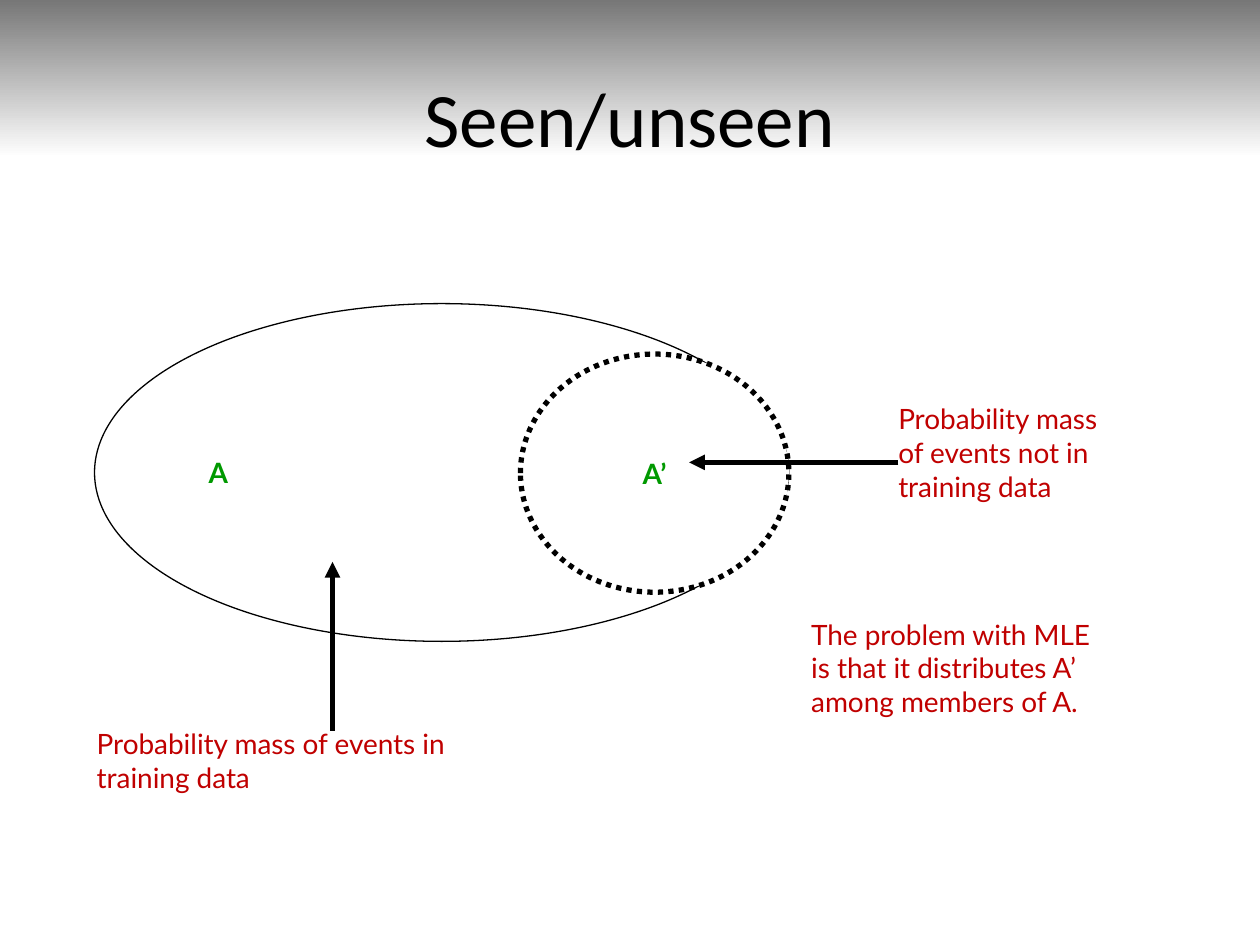
"""Build the slide on seen and unseen probability mass."""
from dataclasses import dataclass

from lxml import etree
from pptx import Presentation
from pptx.dml.color import RGBColor
from pptx.enum.dml import MSO_LINE
from pptx.enum.shapes import MSO_CONNECTOR, MSO_SHAPE
from pptx.enum.text import MSO_ANCHOR, MSO_AUTO_SIZE, PP_ALIGN
from pptx.oxml.ns import qn
from pptx.util import Pt

RECT, OVAL = MSO_SHAPE.RECTANGLE, MSO_SHAPE.OVAL
STRAIGHT = MSO_CONNECTOR.STRAIGHT
DOTS = MSO_LINE.ROUND_DOT
MIDDLE, TOP = MSO_ANCHOR.MIDDLE, MSO_ANCHOR.TOP
LEFT, CENTER = PP_ALIGN.LEFT, PP_ALIGN.CENTER
GROW = MSO_AUTO_SIZE.SHAPE_TO_FIT_TEXT


@dataclass(frozen=True)
class Theme:
    black: RGBColor = RGBColor(0x00, 0x00, 0x00)
    white: RGBColor = RGBColor(0xFF, 0xFF, 0xFF)
    gray: RGBColor = RGBColor(0x77, 0x77, 0x77)
    green: RGBColor = RGBColor(0x00, 0x99, 0x00)
    red: RGBColor = RGBColor(0xC0, 0x00, 0x00)
    head: str = "Calibri"
    body: str = "Lato"
    large: int = 44
    small: int = 16


theme = Theme()


def write(shape, text, font, size, color, align, anchor, wrap, bold=False):
    frame = shape.text_frame
    frame.text = text
    frame.word_wrap = wrap
    frame.vertical_anchor = anchor
    for para in frame.paragraphs:
        para.alignment = align
        for run in para.runs:
            run.font.name = font
            run.font.size = Pt(size)
            run.font.bold = bold
            run.font.color.rgb = color


deck = Presentation()
deck.slide_width, deck.slide_height = Pt(720), Pt(540)
slide = deck.slides.add_slide(deck.slide_layouts[5])
shapes = slide.shapes

title = shapes.title
band = shapes.add_shape(RECT, 0, 0, Pt(720), Pt(90))
band.shadow.inherit = False
band.line.fill.background()
band.fill.gradient()
band.fill.gradient_angle = 270
for stop, color, place in zip(band.fill.gradient_stops, (theme.gray, theme.white), (0, 1)):
    stop.color.rgb = color
    stop.position = place
title.element.addprevious(band.element)

title.left, title.top, title.width, title.height = Pt(36), Pt(21.6), Pt(648), Pt(90)
write(title, "Seen/unseen", theme.head, theme.large, theme.black, CENTER, MIDDLE, True)

sets = [
    ("A", 54, 173.5, 396.7, 193, 0.75, None, LEFT),
    ("A’", 297.4, 202.3, 153.4, 136.1, 3, DOTS, CENTER),
]
for name, x, y, w, h, line, dash, align in sets:
    oval = shapes.add_shape(OVAL, Pt(x), Pt(y), Pt(w), Pt(h))
    oval.shadow.inherit = False
    oval.fill.solid()
    oval.fill.fore_color.rgb = theme.white
    oval.line.color.rgb = theme.black
    oval.line.width = Pt(line)
    if dash:
        oval.line.dash_style = dash
    write(oval, name, theme.body, theme.small, theme.green, align, MIDDLE, False, True)

notes = [
    ("Probability mass of events in\ntraining data", 48.2, 411.8, 223.9, 46.1, False),
    ("Probability mass\nof events not in\ntraining data", 506.2, 226.1, 131, 65.5, False),
    ("The problem with MLE is that it distributes A’ among members of A.",
     456.5, 349.2, 177.1, 65.5, True),
]
for text, x, y, w, h, wrap in notes:
    box = shapes.add_textbox(Pt(x), Pt(y), Pt(w), Pt(h))
    write(box, text, theme.body, theme.small, theme.red, LEFT, TOP, wrap)
    box.text_frame.auto_size = GROW

for x1, y1, x2, y2 in [(190, 417.6, 190, 321.1), (513.4, 264.2, 393.8, 264.2)]:
    arrow = shapes.add_connector(STRAIGHT, Pt(x1), Pt(y1), Pt(x2), Pt(y2))
    arrow.line.color.rgb = theme.black
    arrow.line.width = Pt(3)
    etree.SubElement(arrow.line._get_or_add_ln(), qn("a:tailEnd"), type="triangle")
    etree.SubElement(arrow.element.spPr, qn("a:effectLst"))

deck.save("out.pptx")
